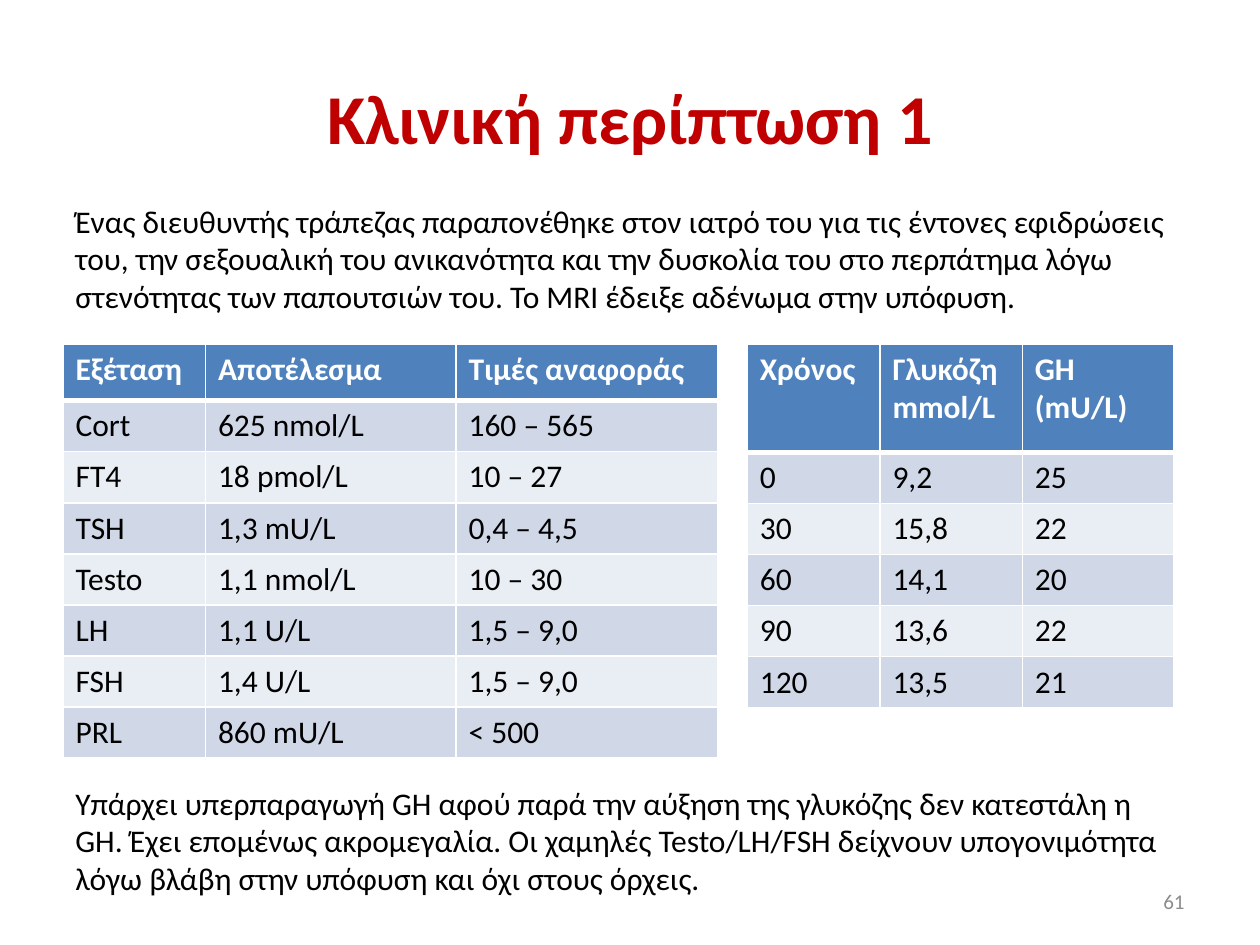
from lxml.etree import SubElement
from pptx import Presentation
from pptx.dml.color import RGBColor
from pptx.enum.text import MSO_ANCHOR, PP_ALIGN
from pptx.oxml.ns import qn
from pptx.util import Pt


def color(hex_code):
    return RGBColor.from_string(hex_code)


class SlideBuilder:
    font = "Calibri"
    header_fill = "4F81BD"
    bands = ("D0D8E8", "E9EDF4")
    line = "FFFFFF"
    body = {"size": Pt(18), "bold": False}

    def __init__(self, slide):
        self.s = slide

    def fill_text(self, tf, text, hex_code="000000", align=PP_ALIGN.LEFT, **fmt):
        tf.text = text
        for p in tf.paragraphs:
            p.alignment = align
            for r in p.runs:
                r.font.name = self.font
                r.font.color.rgb = color(hex_code)
                for name, value in {**self.body, **fmt}.items():
                    setattr(r.font, name, value)

    def text(self, box, text, anchor=MSO_ANCHOR.TOP, **fmt):
        tf = self.s.shapes.add_textbox(*map(Pt, box)).text_frame
        tf.word_wrap = True
        tf.vertical_anchor = anchor
        self.fill_text(tf, text, **fmt)

    def borders(self, cell, **widths):
        tc_pr = cell._tc.get_or_add_tcPr()
        for i, side in enumerate("LRTB"):
            ln = SubElement(tc_pr, qn(f"a:ln{side}"), w=str(Pt(widths.get(side, 1))))
            fill = SubElement(ln, qn("a:solidFill"))
            SubElement(fill, qn("a:srgbClr"), val=self.line)
            tc_pr.insert(i, ln)  # borders come before the cell fill

    def table(self, left, top, widths, header_height, row_height, rows):
        heights = [header_height] + [row_height] * (len(rows) - 1)
        size = map(Pt, (left, top, sum(widths), sum(heights)))
        tbl = self.s.shapes.add_table(len(rows), len(widths), *size).table
        for col, width in zip(tbl.columns, widths):
            col.width = Pt(width)
        for i, (row, height, values) in enumerate(zip(tbl.rows, heights, rows)):
            row.height = Pt(height)
            for cell, value in zip(row.cells, values):
                cell.fill.solid()
                if i == 0:
                    cell.fill.fore_color.rgb = color(self.header_fill)
                    self.fill_text(cell.text_frame, value, "FFFFFF", bold=True)
                    self.borders(cell, B=3)
                else:
                    cell.fill.fore_color.rgb = color(self.bands[(i - 1) % 2])
                    self.fill_text(cell.text_frame, value)
                    self.borders(cell, T=3 if i == 1 else 1)


LEFT, TABLE_TOP, ROW = 36, 196.5, 29.2

HORMONES = [
    ("Εξέταση", "Αποτέλεσμα", "Τιμές αναφοράς"),
    ("Cort", "625 nmol/L", "160 – 565"),
    ("FT4", "18 pmol/L", "10 – 27"),
    ("TSH", "1,3 mU/L", "0,4 – 4,5"),
    ("Testo", "1,1 nmol/L", "10 – 30"),
    ("LH", "1,1 U/L", "1,5 – 9,0"),
    ("FSH", "1,4 U/L", "1,5 – 9,0"),
    ("PRL", "860 mU/L", "< 500"),
]
GLUCOSE_TEST = [
    ("Χρόνος", "Γλυκόζη\nmmol/L", "GH\n(mU/L)"),
    ("0", "9,2", "25"),
    ("30", "15,8", "22"),
    ("60", "14,1", "20"),
    ("90", "13,6", "22"),
    ("120", "13,5", "21"),
]


def main():
    prs = Presentation()
    prs.slide_width, prs.slide_height = Pt(720), Pt(540)
    s = SlideBuilder(prs.slides.add_slide(prs.slide_layouts[6]))

    # Title
    s.text((LEFT, 21.6, 648, 90), "Κλινική περίπτωση 1", MSO_ANCHOR.MIDDLE,
           hex_code="C00000", align=PP_ALIGN.CENTER, size=Pt(40), bold=True)

    # Case history
    s.text((LEFT, 111.6, 657, 72.7),
           "Ένας διευθυντής τράπεζας παραπονέθηκε στον ιατρό του για τις έντονες "
           "εφιδρώσεις του, την σεξουαλική του ανικανότητα και την δυσκολία του στο "
           "περπάτημα λόγω στενότητας των παπουτσιών του. To ΜRI έδειξε αδένωμα "
           "στην υπόφυση.")

    # Laboratory results
    s.table(LEFT, TABLE_TOP, (81.4, 143.2, 149.8), 32.4, ROW, HORMONES)
    s.table(427, TABLE_TOP, (75.8, 81.4, 86.6), 62, ROW, GLUCOSE_TEST)

    # Diagnosis
    s.text((LEFT, 444.2, 635, 72.7),
           "Υπάρχει υπερπαραγωγή GH αφού παρά την αύξηση της γλυκόζης δεν κατεστάλη "
           "η GH. Έχει επομένως ακρομεγαλία. Οι χαμηλές Testo/LH/FSH δείχνουν "
           "υπογονιμότητα λόγω βλάβη στην υπόφυση και όχι στους όρχεις.")

    # Page number
    s.text((516, 500.5, 168, 28.8), "61", MSO_ANCHOR.MIDDLE,
           hex_code="8C8C8C", align=PP_ALIGN.RIGHT, size=Pt(12))

    prs.save("out.pptx")


if __name__ == "__main__":
    main()
